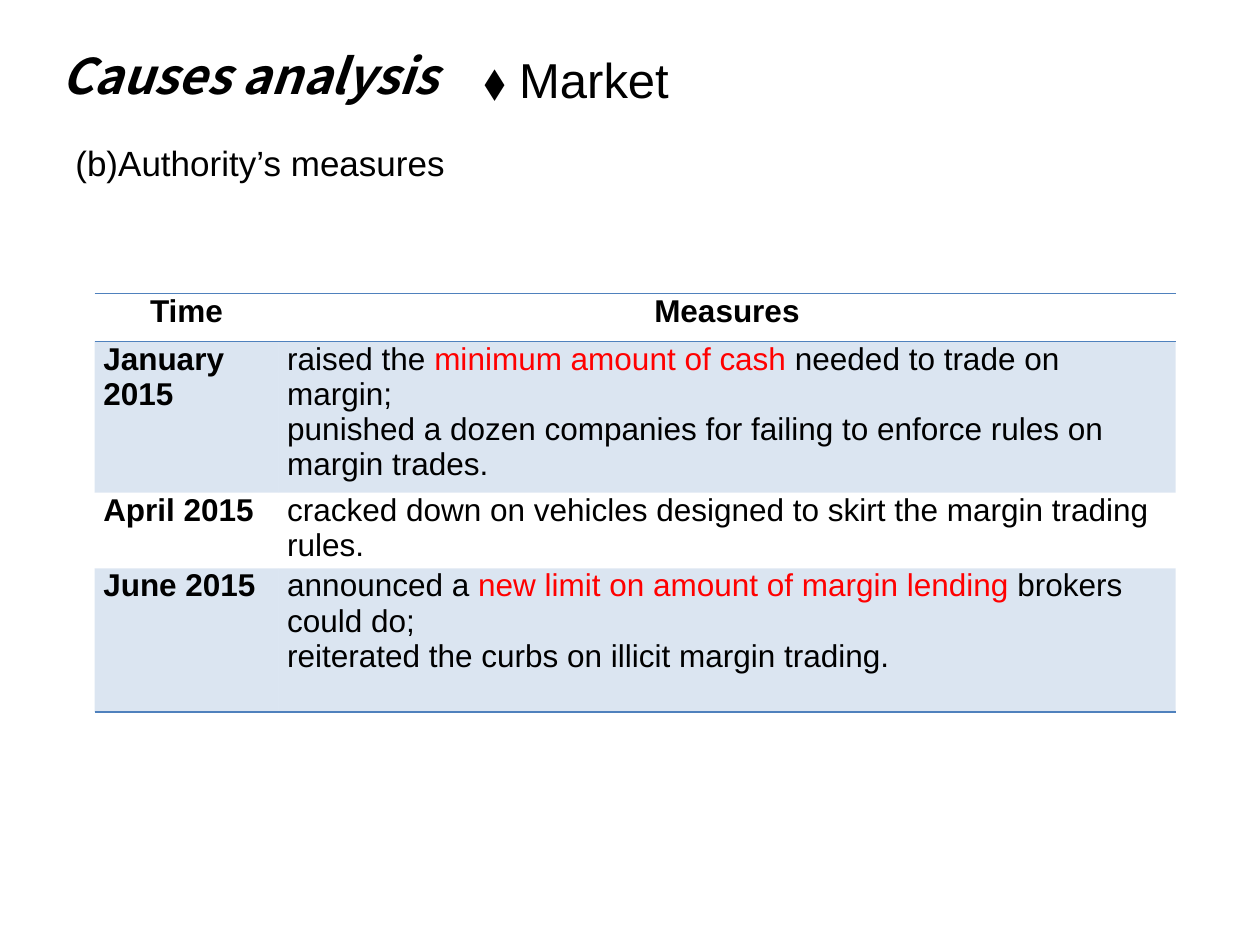
from typing import NamedTuple

from lxml import etree
from pptx import Presentation
from pptx import util as u
from pptx.dml.color import RGBColor
from pptx.enum import text
from pptx.oxml import ns

HUES = {"ink": "000000", "key": "FF0000", "blue": "4F81BD"}
WIDE, HIGH = 10, 7.5
COLS = (1.46, 7.12)
ROWS = (0.38, 1.14, 0.38, 1.14)
RULED = {0, 1, len(ROWS)}  # row edges that carry a line
BANDS = {1, 3}
MARK = "|"  # encloses words shown in the key colour


class Label(NamedTuple):
    words: str
    left: float
    top: float
    width: float
    height: float
    size: int
    font: str = "Arial"
    strong: bool = False


LABELS = (
    Label("Causes analysis", 0.39, 0.31, 5.95, 0.57, 28, "Noto Sans CJK SC", True),
    Label("⬧ Market", 3.74, 0.34, 1.9, 0.57, 28),
    Label("(b)Authority’s measures", 0.5, 1.07, 8.67, 0.44, 20),
)

CELLS = (
    ("Time", "Measures"),
    ("January 2015",
     "raised the |minimum amount of cash |needed to trade on margin;\n"
     "punished a dozen companies for failing to enforce rules on margin trades."),
    ("April 2015",
     "cracked down on vehicles designed to skirt the margin trading rules."),
    ("June 2015",
     "announced a |new limit on amount of margin lending |brokers could do;\n"
     "reiterated the curbs on illicit margin trading."),
)


def style(run, size: int, font: str = "Arial", hue: str = "ink",
          bold: bool = False, slant: bool = False) -> None:
    run.font.size = u.Pt(size)
    run.font.name = font
    run.font.bold = bold
    run.font.italic = slant
    run.font.color.rgb = RGBColor.from_string(HUES[hue])
    for tag in ("a:ea", "a:cs"):
        face = etree.SubElement(run.font._element, ns.qn(tag))
        face.set("typeface", font)


def add_label(slide, item: Label) -> None:
    box = slide.shapes.add_textbox(*map(u.Inches, item[1:5]))
    frame = box.text_frame
    frame.text = item.words
    frame.word_wrap = True
    frame.auto_size = text.MSO_AUTO_SIZE.SHAPE_TO_FIT_TEXT
    style(frame.paragraphs[0].runs[0], item.size, item.font,
          bold=item.strong, slant=item.strong)


def rule_cell(cell, row: int) -> None:
    """Draw the ruled edges of a cell and clear the other ones."""
    props = cell._tc.get_or_add_tcPr()
    sides = {"L": False, "R": False, "T": row in RULED, "B": row + 1 in RULED}
    for spot, (side, shown) in enumerate(sides.items()):
        line = etree.Element(ns.qn(f"a:ln{side}"), w=str(u.Pt(1)))
        fill = etree.SubElement(line, ns.qn("a:solidFill" if shown else "a:noFill"))
        if shown:
            etree.SubElement(fill, ns.qn("a:srgbClr"), val=HUES["blue"])
        props.insert(spot, line)


def fill_cell(cell, row: int) -> None:
    if row not in BANDS:
        cell.fill.background()
        return
    cell.fill.solid()
    cell.fill.fore_color.rgb = RGBColor.from_string(HUES["blue"])
    tint = cell._tc.tcPr.find(".//" + ns.qn("a:srgbClr"))
    etree.SubElement(tint, ns.qn("a:alpha"), val="20000")


def write_cell(cell, words: str, row: int, col: int) -> None:
    cell.margin_left = cell.margin_right = u.Inches(0.07)
    cell.margin_top = cell.margin_bottom = 0
    frame = cell.text_frame
    for n, line in enumerate(words.split("\n")):
        para = frame.add_paragraph() if n else frame.paragraphs[0]
        if row == 0:
            para.alignment = text.PP_ALIGN.CENTER
        for k, part in enumerate(line.split(MARK)):
            run = para.add_run()
            run.text = part
            style(run, 18, hue="key" if k % 2 else "ink",
                  bold=row == 0 or col == 0)


def add_grid(slide) -> None:
    place = map(u.Inches, (0.75, 2.33, sum(COLS), sum(ROWS)))
    table = slide.shapes.add_table(len(ROWS), len(COLS), *place).table
    table.first_row = table.horz_banding = False
    for col, width in zip(table.columns, COLS):
        col.width = u.Inches(width)
    for r, height in enumerate(ROWS):
        table.rows[r].height = u.Inches(height)
        for c, words in enumerate(CELLS[r]):
            cell = table.cell(r, c)
            write_cell(cell, words, r, c)
            fill_cell(cell, r)
            rule_cell(cell, r)


def main() -> None:
    deck = Presentation()
    deck.slide_width, deck.slide_height = u.Inches(WIDE), u.Inches(HIGH)
    slide = deck.slides.add_slide(deck.slide_layouts[6])
    for item in LABELS:
        add_label(slide, item)
    add_grid(slide)
    deck.save("out.pptx")


if __name__ == "__main__":
    main()
